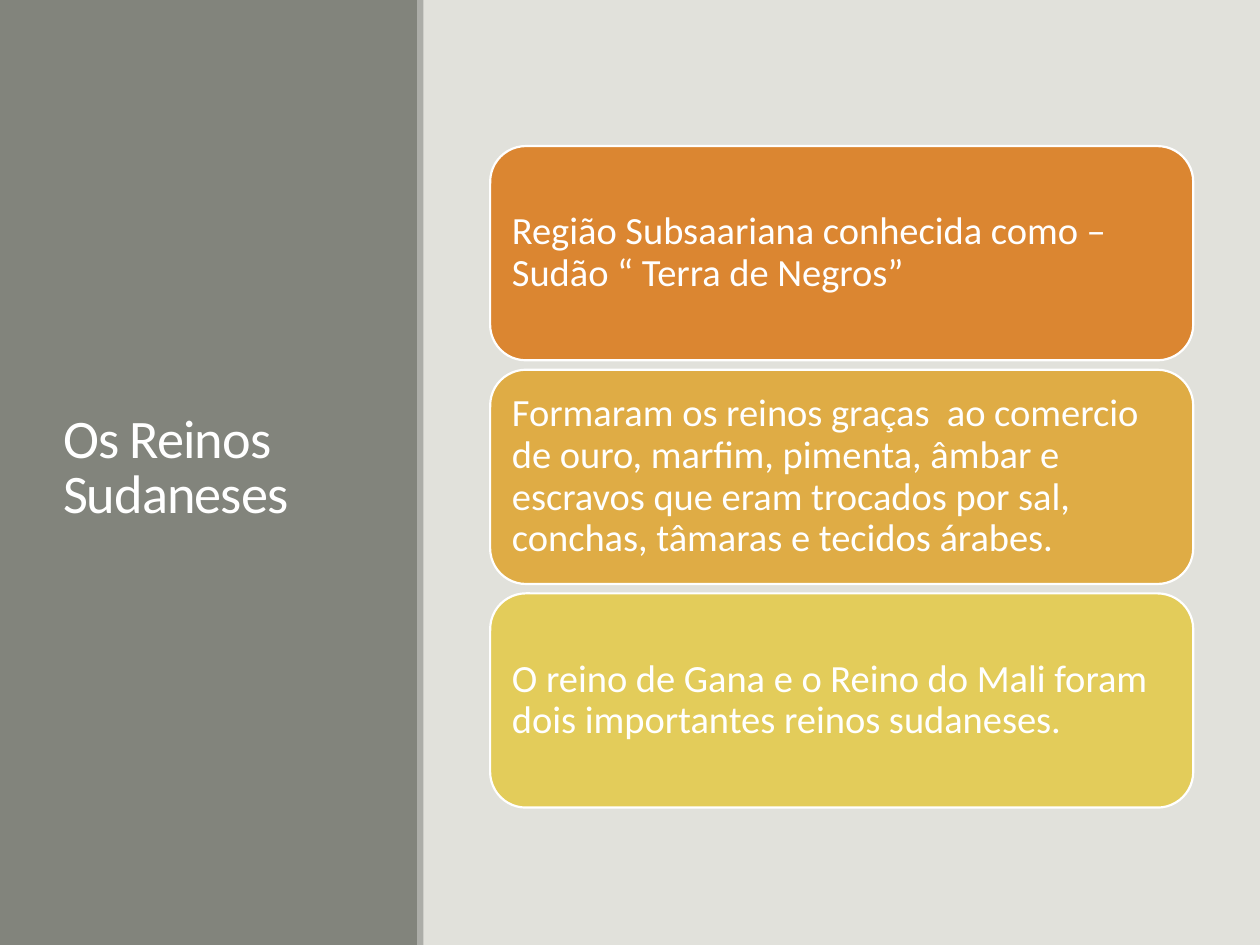
from pptx import Presentation
from pptx.dml.color import RGBColor
from pptx.enum.shapes import MSO_SHAPE
from pptx.enum.text import MSO_ANCHOR, MSO_AUTO_SIZE, PP_ALIGN
from pptx.util import Inches, Pt

RECT = MSO_SHAPE.RECTANGLE
ROUND = MSO_SHAPE.ROUNDED_RECTANGLE
MIDDLE = MSO_ANCHOR.MIDDLE
LEFT = PP_ALIGN.LEFT
FIXED = MSO_AUTO_SIZE.NONE

WHITE = RGBColor(0xFF, 0xFF, 0xFF)
PAPER = RGBColor(0xE1, 0xE1, 0xDB)
GREY = RGBColor(0x82, 0x84, 0x7C)
SILVER = RGBColor(0xAC, 0xAD, 0xA8)
ORANGE = RGBColor(0xDB, 0x86, 0x31)
AMBER = RGBColor(0xDF, 0xAC, 0x45)
YELLOW = RGBColor(0xE3, 0xCC, 0x5A)

CARDS = [
    (ORANGE, "Região Subsaariana conhecida como – Sudão “ Terra de Negros”"),
    (AMBER, "Formaram os reinos graças  ao comercio de ouro, marfim, pimenta, "
            "âmbar e escravos que eram trocados por sal, conchas, tâmaras e "
            "tecidos árabes."),
    (YELLOW, "O reino de Gana e o Reino do Mali foram dois importantes reinos "
             "sudaneses."),
]

deck = Presentation()
deck.slide_width = Inches(10)
deck.slide_height = Inches(7.5)
slide = deck.slides.add_slide(deck.slide_layouts[5])
slide.background.fill.solid()
slide.background.fill.fore_color.rgb = PAPER
shapes = slide.shapes
title = shapes.title


def add_box(kind, left, top, width, height, color):
    box = shapes.add_shape(kind, Inches(left), Inches(top),
                           Inches(width), Inches(height))
    box.shadow.inherit = False
    box.fill.solid()
    box.fill.fore_color.rgb = color
    box.line.fill.background()
    return box


def add_text(shape, text, size, space):
    frame = shape.text_frame
    frame.word_wrap = True
    frame.auto_size = FIXED
    frame.vertical_anchor = MIDDLE
    para = frame.paragraphs[0]
    para.alignment = LEFT
    para.line_spacing = space
    run = para.add_run()
    run.text = text
    run.font.name = "Calibri"
    run.font.size = Pt(size)
    run.font.color.rgb = WHITE
    return run


add_box(RECT, 0, 0, 3.32, 7.5, GREY)
add_box(RECT, 3.31, 0, 0.05, 7.5, SILVER)

title.left, title.top = Inches(0.4), Inches(0.57)
title.width, title.height = Inches(2.53), Inches(6.31)
run = add_text(title, "Os Reinos Sudaneses", 31, 0.85)
run.font._element.set("spc", "-50")
shapes._spTree.append(title._element)

top, high, gap = 1.16, 1.7, 0.075
for row, (color, text) in enumerate(CARDS):
    card = add_box(ROUND, 3.89, top + row * (high + gap), 5.58, high, color)
    card.line.color.rgb = WHITE
    card.line.width = Pt(1.25)
    frame = card.text_frame
    frame.margin_left = frame.margin_right = Inches(0.09)
    frame.margin_top = frame.margin_bottom = Inches(0.09)
    add_text(card, text, 22, 0.9)

deck.save("out.pptx")
